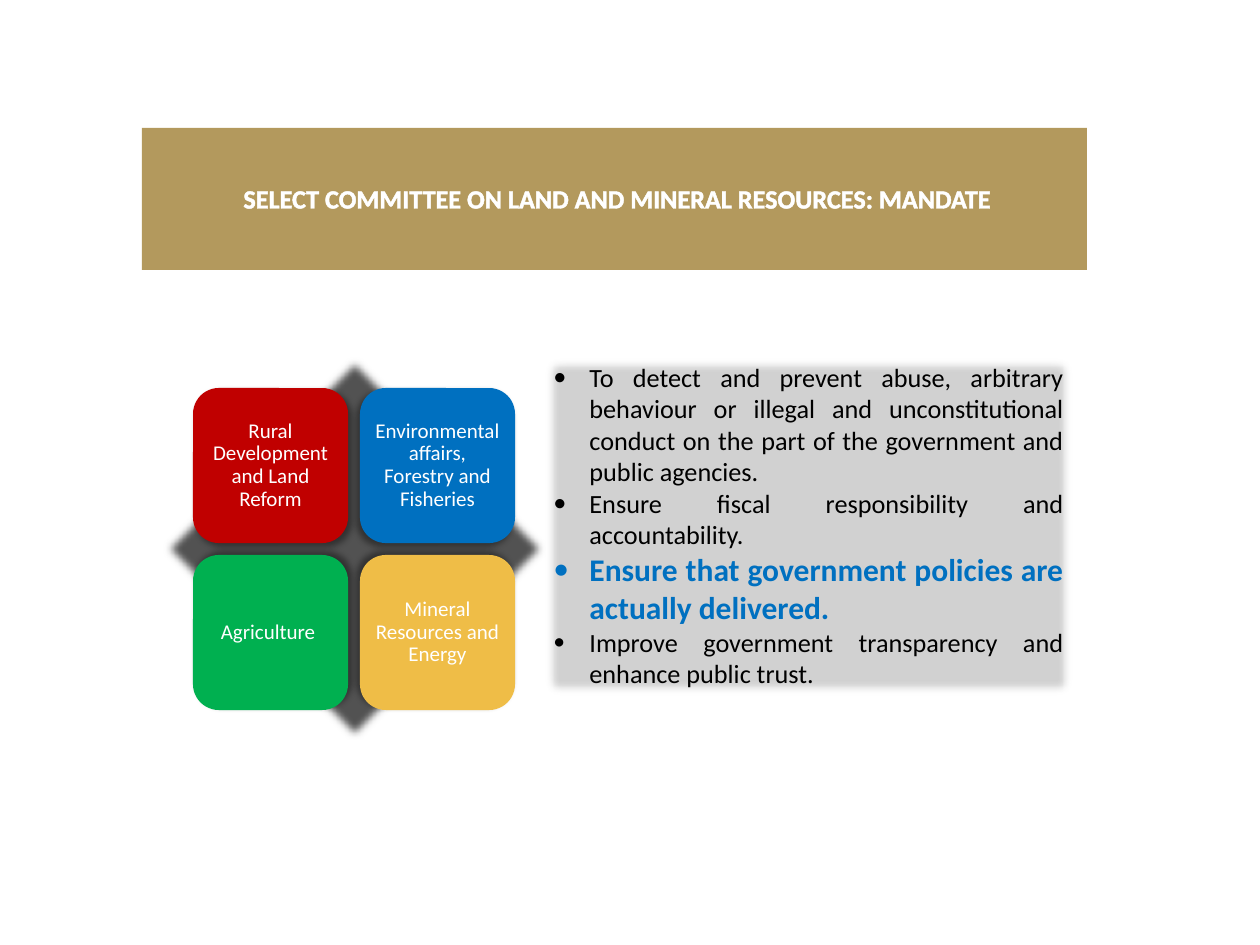
"""Builds the mandate slide of the select committee."""
from lxml import etree
from pptx import Presentation
from pptx import util as u
from pptx.dml.color import RGBColor
from pptx.enum import shapes, text
from pptx.oxml.ns import qn

HEX = dict(gold="B3995D", white="FFFFFF", dark="525252", red="C00000", blue="0070C0",
           green="00B050", amber="EFBD47", gray="A5A5A5", black="000000")
FONT = "Calibri"
TITLE = "SELECT COMMITTEE ON LAND AND MINERAL RESOURCES: MANDATE"
TILES = [
    ("Rural Development and Land Reform", "red", 45),
    ("Environmental affairs, Forestry and Fisheries", "blue", 135),
    ("Agriculture ", "green", 315),
    ("Mineral Resources and Energy", "amber", 225),
]
DUTIES = [
    ("To detect and prevent abuse, arbitrary behaviour or illegal and unconstitutional "
     "conduct on the part of the government and public agencies.", 15, "black", False, 100),
    ("Ensure fiscal responsibility and accountability.", 15, "black", False, 100),
    ("Ensure that government policies are actually delivered.", 18, "blue", True, 100),
    ("Improve government transparency and enhance public trust.", 15, "black", False, 90),
]
BANNER = (142, 128, 945, 142)
HEAD = (225, 176, 779, 44)
DIAMOND = (155, 350, 398, 398)
PANEL = (541, 355, 535, 344)
GRID, SIDE, STEP = (193, 388), 155, 167


def px(n):
    return u.Emu(round(n * 914400 / 126))


def rgb(name):
    return RGBColor.from_string(HEX[name])


def sub(node, tag, **attrs):
    return etree.SubElement(node, qn("a:" + tag), {k: str(v) for k, v in attrs.items()})


def block(home, kind, box, fill):
    shape = home.add_shape(kind, *map(px, box))
    shape.shadow.inherit = False
    shape.fill.solid()
    shape.fill.fore_color.rgb = rgb(fill)
    shape.line.fill.background()
    return shape


def effects(shape):
    return shape._element.spPr.find(qn("a:effectLst"))


def soften(shape, size):
    sub(effects(shape), "softEdge", rad=u.Pt(size))


def shade(shape, angle):
    cast = sub(effects(shape), "outerShdw", blurRad=u.Pt(4), dist=u.Pt(3),
               dir=angle * 60000, algn="ctr", rotWithShape=0)
    sub(sub(cast, "srgbClr", val=HEX["black"]), "alpha", val=40000)


def write(para, words, size, color, bold=False):
    run = para.add_run()
    run.text = words
    font = run.font
    font.name, font.size, font.bold = FONT, u.Pt(size), bold
    font.color.rgb = rgb(color)
    return run


def add_head(slide):
    block(slide.shapes, shapes.MSO_SHAPE.RECTANGLE, BANNER, "gold")
    head = slide.shapes.title
    slide.shapes._spTree.append(head._element)
    head.left, head.top, head.width, head.height = map(px, HEAD)
    frame = head.text_frame
    frame.word_wrap = True
    frame.auto_size = text.MSO_AUTO_SIZE.NONE
    frame.vertical_anchor = text.MSO_ANCHOR.MIDDLE
    para = frame.paragraphs[0]
    para.alignment = text.PP_ALIGN.RIGHT
    props = write(para, TITLE, 15, "white", True)._r.get_or_add_rPr()
    edge = sub(props, "ln", w=u.Pt(0.71))
    sub(sub(edge, "solidFill"), "srgbClr", val=HEX["white"])
    props.insert(0, edge)


def add_tiles(slide):
    group = slide.shapes.add_group_shape().shapes
    soften(block(group, shapes.MSO_SHAPE.DIAMOND, DIAMOND, "dark"), 5)
    for i, (words, fill, angle) in enumerate(TILES):
        row, col = divmod(i, 2)
        box = (GRID[0] + col * STEP, GRID[1] + row * STEP, SIDE, SIDE)
        tile = block(group, shapes.MSO_SHAPE.ROUNDED_RECTANGLE, box, fill)
        shade(tile, angle)
        frame = tile.text_frame
        frame.word_wrap = True
        frame.vertical_anchor = text.MSO_ANCHOR.MIDDLE
        frame.margin_left = frame.margin_right = px(6)
        frame.margin_top = frame.margin_bottom = px(6)
        para = frame.paragraphs[0]
        para.alignment = text.PP_ALIGN.CENTER
        para.line_spacing = 0.9
        write(para, words, 12, "white")


def add_duties(slide):
    panel = block(slide.shapes, shapes.MSO_SHAPE.RECTANGLE, PANEL, "gray")
    tint = panel._element.spPr.find(qn("a:solidFill"))[0]
    sub(tint, "alpha", val=51000)
    soften(panel, 5)
    frame = panel.text_frame
    frame.word_wrap = True
    frame.vertical_anchor = text.MSO_ANCHOR.TOP
    for i, (words, size, color, bold, share) in enumerate(DUTIES):
        para = frame.add_paragraph() if i else frame.paragraphs[0]
        para.alignment = text.PP_ALIGN.JUSTIFY
        props = para._p.get_or_add_pPr()
        props.set("marL", str(px(36)))
        props.set("indent", str(-px(36)))
        sub(sub(props, "buClr"), "srgbClr", val=HEX[color])
        sub(props, "buSzPct", val=share * 1000)
        sub(props, "buFont", typeface=FONT)
        sub(props, "buChar", char="•")
        write(para, words, size, color, bold)


def main():
    deck = Presentation()
    deck.slide_width, deck.slide_height = px(1260), px(945)
    slide = deck.slides.add_slide(deck.slide_layouts[5])
    add_head(slide)
    add_tiles(slide)
    add_duties(slide)
    deck.save("out.pptx")


if __name__ == "__main__":
    main()
